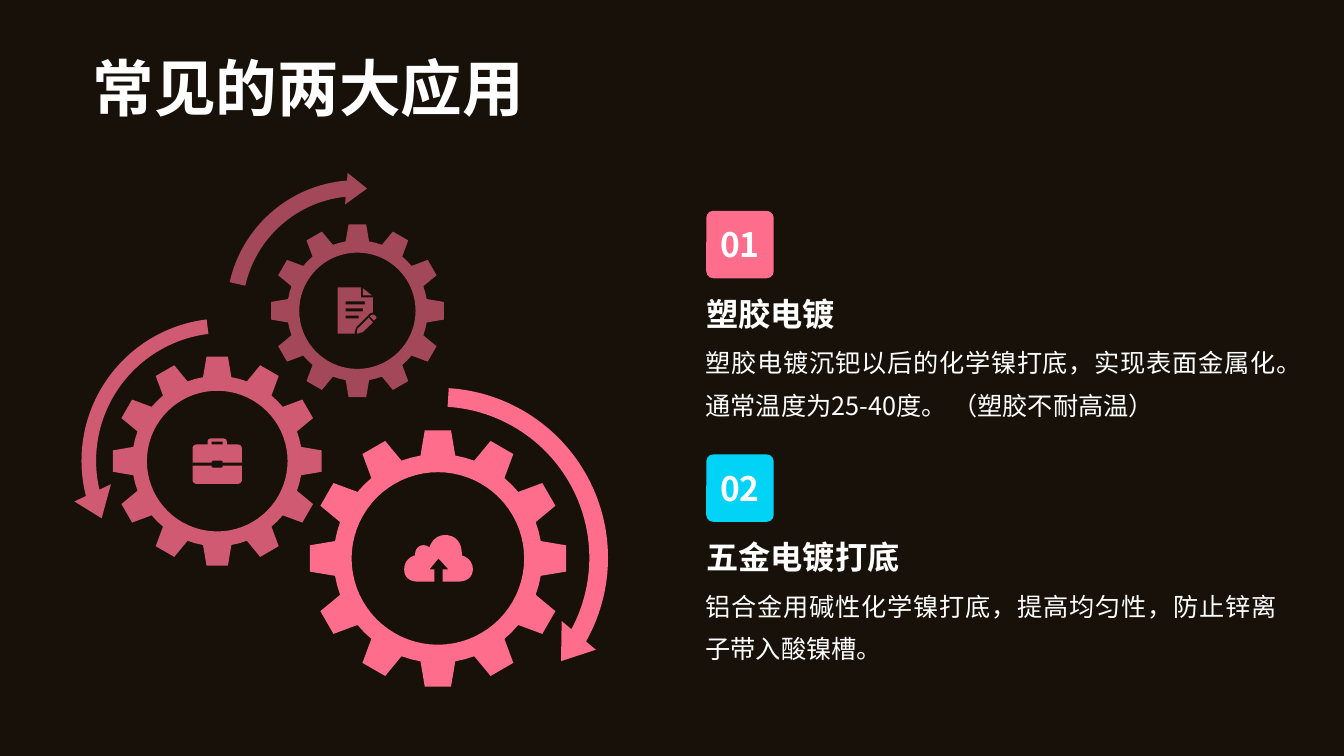
from math import cos, sin, radians
from lxml import etree
from pptx import Presentation
from pptx.dml.color import RGBColor
from pptx.enum import shapes, text
from pptx.oxml import ns
from pptx.util import Pt

FONT = "Noto Sans CJK SC"
HUES = {"back": "18110A", "pink": "FF6D8C", "cyan": "00D3F6", "white": "FFFFFF"}

deck = Presentation()
deck.slide_width, deck.slide_height = Pt(960), Pt(540)
slide = deck.slides.add_slide(deck.slide_layouts[6])
slide.background.fill.solid()
slide.background.fill.fore_color.rgb = RGBColor.from_string(HUES["back"])


def paint(shape, hue, alpha=100):
    shape.shadow.inherit = False
    shape.line.fill.background()
    shape.fill.solid()
    shape.fill.fore_color.rgb = RGBColor.from_string(HUES[hue])
    if alpha < 100:
        color = shape.element.spPr.find(".//" + ns.qn("a:srgbClr"))
        etree.SubElement(color, ns.qn("a:alpha"), val=str(alpha * 1000))


def write(shape, words, size, bold=True, anchor="TOP", align="LEFT", space=1.0, inset=0, wrap=True):
    frame = shape.text_frame
    form = {"word_wrap": wrap, "vertical_anchor": text.MSO_ANCHOR[anchor]}
    for side in ("left", "top", "right", "bottom"):
        form["margin_" + side] = Pt(inset)
    for key, value in form.items():
        setattr(frame, key, value)
    para = frame.paragraphs[0]
    para.alignment, para.line_spacing = text.PP_ALIGN[align], space
    run = para.add_run()
    run.text = words
    for key, value in {"size": Pt(size), "bold": bold, "name": FONT}.items():
        setattr(run.font, key, value)
    run.font.color.rgb = RGBColor.from_string(HUES["white"])
    etree.SubElement(run.font._element, ns.qn("a:ea"), typeface=FONT)


# Title
title = slide.shapes.add_textbox(Pt(66.24), Pt(28), Pt(828), Pt(68))
write(title, "常见的两大应用", 44, anchor="MIDDLE")

# Arrows round the gears: left, top, size, opacity, flipped, adjustments
arrows = [
    (156.2, 123.1, 198, 60, False, (0.058, 5.8, 158.949, 115.627, 0.057)),
    (49, 218.2, 221.8, 80, True, (0.047, 6.881, 8.245, 166.167, 0.065)),
    (182.2, 267.8, 261.4, 100, False, (0.051, 6.704, 17.314, 164.172, 0.061)),
]
for left, top, size, alpha, flip, bends in arrows:
    arrow = slide.shapes.add_shape(shapes.MSO_SHAPE.CIRCULAR_ARROW, Pt(left), Pt(top), Pt(size), Pt(size))
    for i, bend in enumerate(bends):
        arrow.adjustments[i] = bend
    if flip:
        arrow.element.spPr.find(ns.qn("a:xfrm")).set("flipH", "1")
    paint(arrow, "pink", alpha)

# Icons: loops of points; six numbers make a curve
cloud = [[
    (329.8, 396.7), (329.8, 396.7, 331.2, 383.8, 319.7, 382.3),
    (309.6, 380.9, 306.7, 391, 306.7, 391), (306.7, 391, 303.8, 388.1, 299.5, 390.2),
    (295.9, 392.4, 296.6, 396.7, 296.6, 396.7), (296.6, 396.7, 288.7, 398.2, 288.7, 406.8),
    (288.7, 415.4, 297.4, 415.4, 297.4, 415.4), (310.3, 415.4), (310.3, 406.8),
    (306.7, 406.8), (313.2, 398.9), (320.4, 406.8), (316.1, 406.8), (316.1, 415.4),
    (328.3, 415.4), (328.3, 415.4, 337, 415.4, 337.7, 407.5),
    (338.4, 398.9, 329.8, 396.7, 329.8, 396.7),
]]
note = [
    [(241.2, 205.2), (257.8, 205.2), (257.8, 212.4), (266.4, 212.4), (266.4, 223.2),
     (264.2, 223.9), (254.5, 233.6), (253.4, 237), (253.4, 238.3), (241.2, 238.3)],
    [(259.2, 205.9), (265.7, 211), (259.2, 211)],
    [(256.3, 234), (263.5, 226.8), (266.4, 230.4), (259.2, 237.2), (255.2, 238.4),
     (254.9, 237.6), (255.6, 234)],
    [(267.8, 225.4), (269.3, 226.1, 269.3, 227.5, 267.8, 228.2), (267.1, 229),
     (264.2, 226.1), (265, 225.4), (265.7, 224.6, 267.1, 224.6, 267.8, 225.4)],
]
for top, right in ((215.3, 260.6), (220.3, 259.2), (225.4, 256.3)):
    note.append([(247, top), (right, top), (right, top + 2.1), (247, top + 2.1)])
case = [
    [(159.1, 332.6), (159.1, 333.4), (158.4, 334.1), (151.9, 334.1), (151.2, 333.4),
     (151.2, 332.6), (137.5, 332.6), (137.5, 342.7), (137.5, 344.3, 138.8, 345.6, 140.4, 345.6),
     (169.9, 345.6), (171.5, 345.6, 172.8, 344.3, 172.8, 342.7), (172.8, 332.6)],
    [(151.2, 330.5), (151.2, 329.8), (151.9, 329), (158.4, 329), (159.1, 329.8),
     (159.1, 330.5), (172.8, 330.5), (172.8, 320.4), (172.8, 318.8, 171.5, 317.5, 169.9, 317.5),
     (162, 317.5), (162, 315.4), (162, 314.2, 161, 313.2, 159.8, 313.2), (150.5, 313.2),
     (149.3, 313.2, 148.3, 314.2, 148.3, 315.4), (148.3, 317.5), (140.4, 317.5),
     (138.8, 317.5, 137.5, 318.8, 137.5, 320.4), (137.5, 330.5)],
    [(151.2, 315.4), (159.1, 315.4), (159.1, 317.5), (151.2, 317.5)],
]
forms = [(cloud, 100), (note, 60), (case, 80)]

# Gears: twelve teeth round a hole
tooth = [(-9.6, 0.81), (-5.85, 1), (5.85, 1), (9.6, 0.81), (15, 0.81)]
rim = [(30 * i + turn, reach) for i in range(12) for turn, reach in tooth]
hole = [(5 * i, 0.67) for i in range(72)]
for x, y, size, alpha in ((312.8, 398.9, 92, 100), (255.3, 222, 62, 60), (155.2, 329.4, 75, 80)):
    gear = [[(x + size * reach * sin(radians(turn)), y - size * reach * cos(radians(turn)))
             for turn, reach in ring] for ring in (rim, hole)]
    forms.append((gear, alpha))

# Outlines of gears and icons
for loops, alpha in forms:
    pen = None
    for loop in loops:
        dots = []
        for step in loop:
            if len(step) == 2:
                dots.append(step)
                continue
            knots = [dots[-1], step[:2], step[2:4], step[4:]]
            for t in (i / 10 for i in range(1, 11)):
                parts = ((1 - t) ** 3, 3 * t * (1 - t) ** 2, 3 * t * t * (1 - t), t ** 3)
                dots.append(tuple(sum(p * k[axis] for p, k in zip(parts, knots)) for axis in (0, 1)))
        dots = [(Pt(x), Pt(y)) for x, y in dots]
        if pen is None:
            pen = slide.shapes.build_freeform(*dots[0])
        else:
            pen.move_to(*dots[0])
        pen.add_line_segments(dots[1:], close=True)
    paint(pen.convert_to_shape(), "pink", alpha)

# Two uses: badge, heading, body
uses = [
    ("01", "pink", "塑胶电镀", "塑胶电镀沉钯以后的化学镍打底，实现表面金属化。通常温度为25-40度。 （塑胶不耐高温）"),
    ("02", "cyan", "五金电镀打底", "铝合金用碱性化学镍打底，提高均匀性，防止锌离子带入酸镍槽。"),
]
for i, (mark, hue, head, body) in enumerate(uses):
    top = 150.6 + 174 * i
    badge = slide.shapes.add_shape(shapes.MSO_SHAPE.ROUNDED_RECTANGLE, Pt(504.5), Pt(top), Pt(48.2), Pt(48.2))
    badge.adjustments[0] = 0.104
    paint(badge, hue)
    write(badge, mark, 24, anchor="MIDDLE", align="CENTER", inset=3.6, wrap=False)
    box = slide.shapes.add_textbox(Pt(504.5), Pt(top + 54.6), Pt(408.2), Pt(32.4))
    write(box, head, 23, anchor="BOTTOM", space=1.2)
    box = slide.shapes.add_textbox(Pt(504), Pt(top + 89), Pt(408.2), Pt(78.5))
    write(box, body, 18, bold=False, align="JUSTIFY", space=1.4)

deck.save("out.pptx")
